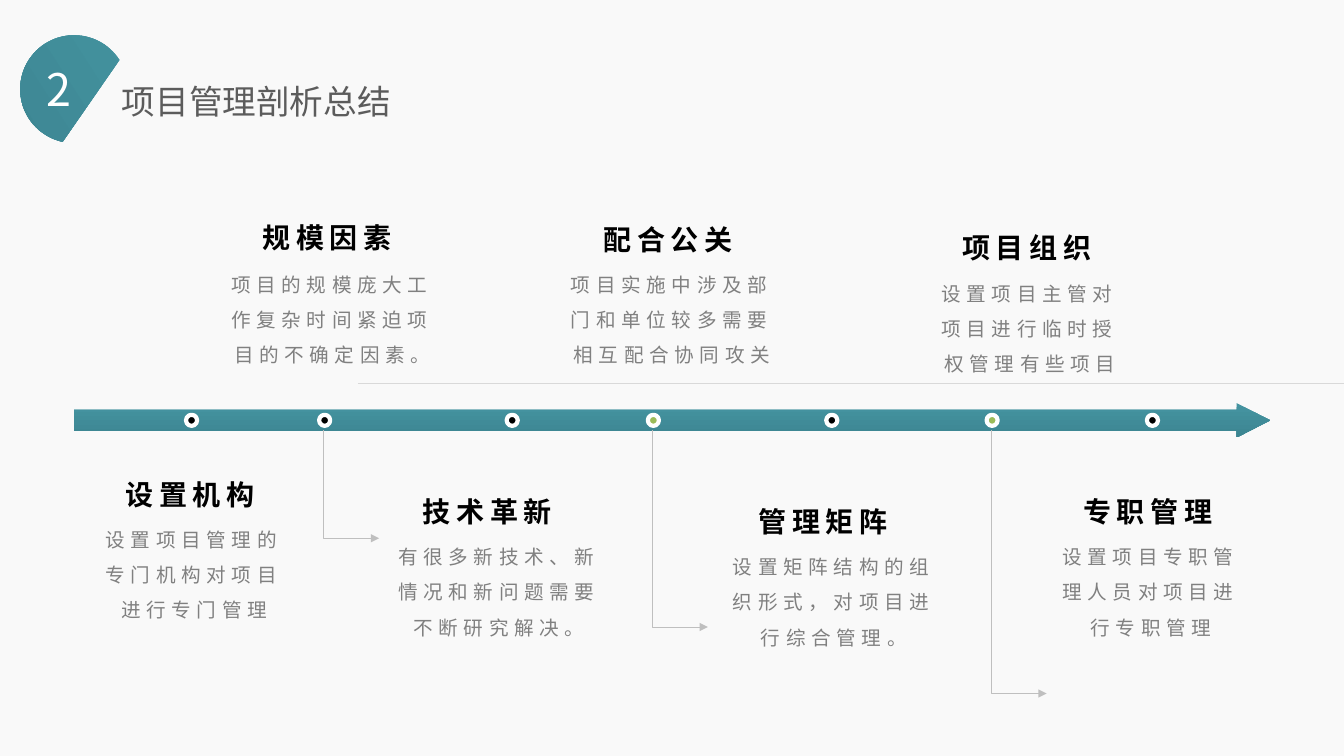
import dataclasses

import lxml.etree
import pptx
import pptx.dml.color
import pptx.enum.shapes
import pptx.enum.text
import pptx.oxml.ns
import pptx.util

COLS, ROWS = 13.33, 7.5  # grid of one-inch cells
SHAPE = pptx.enum.shapes.MSO_SHAPE
LINK = pptx.enum.shapes.MSO_CONNECTOR
MID = pptx.enum.text.PP_ALIGN.CENTER


@dataclasses.dataclass(frozen=True)
class Theme:
    font: str = "Noto Sans CJK JP"
    back: str = "F9F9F9"
    teal: tuple = ("4594A1", "3C8591")
    title: tuple = ("5C5C5C", "2F2F31")
    white: str = "FFFFFF"
    black: str = "000000"
    green: str = "9BBB59"
    body: str = "808080"
    rule: str = "D9D9D9"
    branch: str = "BFBFBF"
    title_size: int = 24
    badge_size: int = 32
    head_size: int = 20
    body_size: int = 14


THEME = Theme()
AXIS = 4.17  # row of the timeline's centre
DOT = 0.11

# column, colour, end of branch (column, row)
DOTS = [
    (1.9, THEME.black, None),
    (3.22, THEME.black, (3.76, 5.34)),
    (5.08, THEME.black, None),
    (6.48, THEME.green, (7.02, 6.22)),
    (8.25, THEME.black, None),
    (9.84, THEME.green, (10.38, 6.88)),
    (11.43, THEME.black, None),
]

# heading, its column and row, body, its column, row and width
STEPS = [
    ("设置机构", 0.93, 4.52, "设置项目管理的专门机构对项目进行专门管理", 0.89, 5.07, 2.07),
    ("规模因素", 2.29, 1.97, "项目的规模庞大工作复杂时间紧迫项目的不确定因素。", 2.14, 2.54, 2.31),
    ("技术革新", 3.88, 4.69, "有很多新技术、新情况和新问题需要不断研究解决。", 3.84, 5.24, 2.22),
    ("配合公关", 5.67, 1.99, "项目实施中涉及部门和单位较多需要相互配合协同攻关", 5.51, 2.54, 2.31),
    ("管理矩阵", 7.21, 4.79, "设置矩阵结构的组织形式，对项目进行综合管理。", 7.16, 5.34, 2.22),
    ("项目组织", 9.23, 2.07, "设置项目主管对项目进行临时授权管理有些项目", 9.18, 2.63, 2.07),
    ("专职管理", 10.43, 4.69, "设置项目专职管理人员对项目进行专职管理", 10.38, 5.24, 2.07),
]


def cells(*counts):
    return [pptx.util.Inches(count) for count in counts]


def tint(hue):
    return pptx.dml.color.RGBColor.from_string(hue)


def paint(fill, hue, angle=270):
    """Fill with one colour, or with a gradient when hue is a pair."""
    if isinstance(hue, str):
        fill.solid()
        fill.fore_color.rgb = tint(hue)
        return
    fill.gradient()
    fill.gradient_angle = angle
    for stop, shade in zip(fill.gradient_stops, hue):
        stop.color.rgb = tint(shade)


def add_node(parent, tag, **attrs):
    node = lxml.etree.SubElement(parent, pptx.oxml.ns.qn(tag))
    for name, value in attrs.items():
        node.set(name, value)


def add_text(slide, text, box, size, hue, bold=False, align=None, lead=None, track=0):
    """Place text in box; lead is line spacing, track is letter spacing in points."""
    frame = slide.shapes.add_textbox(*cells(*box)).text_frame
    frame.word_wrap = True
    frame.auto_size = pptx.enum.text.MSO_AUTO_SIZE.SHAPE_TO_FIT_TEXT
    para = frame.paragraphs[0]
    para.alignment = align
    para.line_spacing = lead
    run = para.add_run()
    run.text = text
    font = run.font
    font.size = pptx.util.Pt(size)
    font.bold = bold
    font.name = THEME.font
    paint(font.fill, hue, 180)
    props = run._r.get_or_add_rPr()
    add_node(props, "a:ea", typeface=THEME.font)
    if track:
        props.set("spc", str(track * 100))


def add_form(slide, kind, box, hue, edge=None, width=0):
    form = slide.shapes.add_shape(kind, *cells(*box))
    form.shadow.inherit = False
    paint(form.fill, hue)
    if edge:
        paint(form.line.fill, edge)
        form.line.width = pptx.util.Pt(width)
    else:
        form.line.fill.background()
    return form


def add_link(slide, kind, ends, hue, width):
    link = slide.shapes.add_connector(kind, *cells(*ends))
    link.line.color.rgb = tint(hue)
    link.line.width = pptx.util.Pt(width)
    return link


def end_link(link):
    """Turn off the shadow, once the line is complete."""
    add_node(link._element.spPr, "a:effectLst")


def add_branch(slide, left, top, right, base):
    """Draw an arrow that runs down, then right."""
    mid_x, mid_y = (left + right) / 2, (top + base) / 2
    half_w, half_h = (right - left) / 2, (base - top) / 2
    # A quarter turn swaps the width and height of the box.
    ends = (mid_x + half_h, mid_y - half_w, mid_x - half_h, mid_y + half_w)
    link = add_link(slide, LINK.ELBOW, ends, THEME.branch, 0.25)
    props = link._element.spPr
    props.find(pptx.oxml.ns.qn("a:xfrm")).set("rot", str(270 * 60000))
    props.find(pptx.oxml.ns.qn("a:prstGeom")).set("prst", "bentConnector2")
    add_node(link.line._get_or_add_ln(), "a:tailEnd", type="triangle")
    end_link(link)


def add_top(slide):
    badge = add_form(slide, SHAPE.CHORD, (0.2, 0.35, 1.07, 1.07), THEME.teal)
    badge.rotation = 57.3
    end_link(add_link(slide, LINK.STRAIGHT, (3.55, 3.8, COLS, 3.8), THEME.rule, 0.5))
    add_text(slide, "项目管理剖析总结", (1.11, 0.75, 4.19, 0.5),
             THEME.title_size, THEME.title)
    add_text(slide, "2", (0.36, 0.56, 0.52, 0.64), THEME.badge_size, THEME.white)


def add_axis(slide):
    arrow = add_form(slide, SHAPE.RIGHT_ARROW, (0.73, AXIS - 0.17, 11.87, 0.34), THEME.teal)
    arrow.adjustments[0] = 0.62
    arrow.adjustments[1] = 0.98
    for col, hue, end in DOTS:
        add_form(slide, SHAPE.OVAL, (col - DOT / 2, AXIS - DOT / 2, DOT, DOT),
                 hue, THEME.white, 3)
        if end:
            add_branch(slide, col - 0.01, AXIS + 0.1, *end)


def add_step(slide, head, col, row, body, body_col, body_row, width):
    style = dict(align=MID, lead=1.5, track=4)
    add_text(slide, head, (col, row, 1.91, 0.55), THEME.head_size, THEME.black,
             bold=True, **style)
    add_text(slide, body, (body_col, body_row, width, 1.12), THEME.body_size,
             THEME.body, **style)


def main():
    deck = pptx.Presentation()
    deck.slide_width, deck.slide_height = cells(COLS, ROWS)
    slide = deck.slides.add_slide(deck.slide_layouts[6])
    paint(slide.background.fill, THEME.back)
    add_top(slide)
    add_axis(slide)
    for step in STEPS:
        add_step(slide, *step)
    deck.save("out.pptx")


if __name__ == "__main__":
    main()
